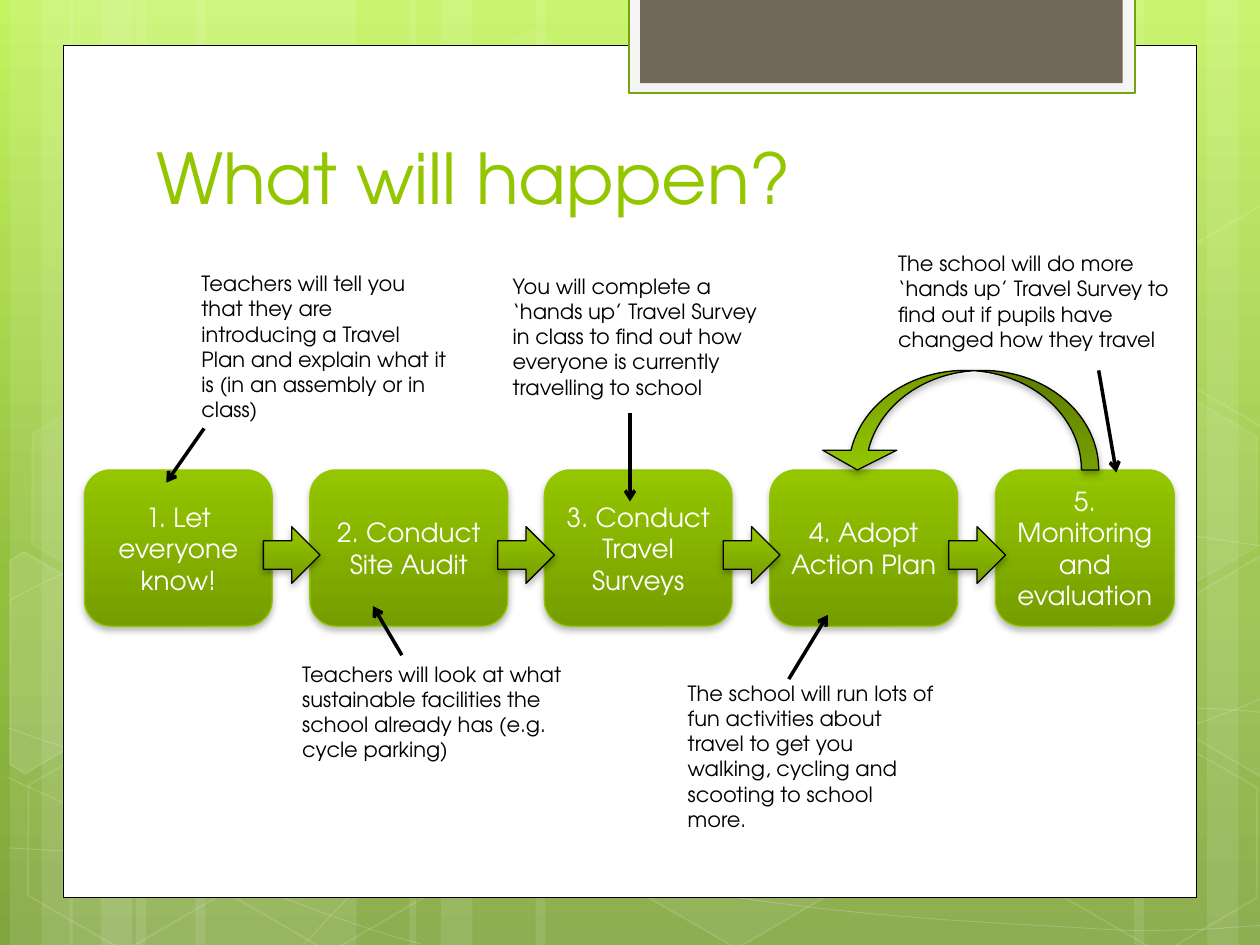
from copy import deepcopy

from lxml.etree import SubElement
from pptx import Presentation
from pptx.dml.color import RGBColor
from pptx.enum.shapes import MSO_CONNECTOR, MSO_SHAPE
from pptx.enum.text import MSO_ANCHOR, PP_ALIGN
from pptx.oxml.ns import qn
from pptx.util import Inches, Pt

FONT = "TeX Gyre Adventor"
GREEN = "94C600"
GREEN_FADE = [(0, GREEN), (1, "769D00")]


def paint(fill, colour, opacity=100):
    """Fill with nothing, one hex colour, or a downward gradient of (position, hex) stops."""
    if colour is None:
        fill.background()
    elif isinstance(colour, str):
        fill.solid()
        fill.fore_color.rgb = RGBColor.from_string(colour)
        if opacity < 100:
            for tag in fill._xPr.iter(qn("a:srgbClr")):
                SubElement(tag, qn("a:alpha"), val=str(opacity * 1000))
    else:
        fill.gradient()
        fill.gradient_angle = 270
        stop_list = fill._xPr.find(".//" + qn("a:gsLst"))
        while len(stop_list) < len(colour):
            stop_list.append(deepcopy(stop_list[-1]))
        for stop, (position, value) in zip(fill.gradient_stops, colour):
            stop.position = position
            stop.color.rgb = RGBColor.from_string(value)


def style(shape, fill=None, opacity=100, line=None, width=1, line_opacity=100, shadow=False):
    paint(shape.fill, fill, opacity)
    if line:
        shape.line.width = Pt(width)
        paint(shape.line.fill, line, line_opacity)
    else:
        shape.line.fill.background()
    shape.shadow.inherit = False
    if shadow:
        effects = shape._element.spPr.find(qn("a:effectLst"))
        outer = SubElement(effects, qn("a:outerShdw"), blurRad=str(Pt(4)), dist=str(Pt(2)),
                           dir="5400000", rotWithShape="0")
        black = SubElement(outer, qn("a:srgbClr"), val="000000")
        SubElement(black, qn("a:alpha"), val="28000")


deck = Presentation()
deck.slide_width, deck.slide_height = Inches(10), Inches(7.5)
page = deck.slides.add_slide(deck.slide_layouts[6])
shapes = page.shapes
paint(page.background.fill, [(0, "C3F35F"), (0.62, "93BF3F"), (1, "81A53E")])

# Pale vertical bands: left, width
bands = [(1.08, 1.75), (0.08, 0.5), (0.33, 0.83), (1.55, 1.75), (0.55, 0.5), (0.8, 0.83),
         (7.33, 1.75), (9.58, 0.5), (9, 0.83), (4.25, 3.08), (3.25, 0.5), (3.5, 0.83)]
for left, width in bands:
    band = shapes.add_shape(MSO_SHAPE.RECTANGLE, Inches(left), 0, Inches(width), Inches(7.5))
    style(band, "FFFFFF", 10)

# Faint curves: a start point, then cubic segments of two controls and an end
curves = [
    [(0.07, 6.73), (0.61, 6.76), (1.15, 6.79), (1.9, 6.78), (2.65, 6.77), (3.58, 6.75),
     (4.58, 6.65), (5.58, 6.55), (7, 6.36), (7.92, 6.17), (8.83, 5.98), (9.77, 5.68),
     (10.07, 5.51)],
    [(0.07, 4.77), (0.36, 4.61), (0.65, 4.46), (1.21, 4.31), (1.78, 4.16), (2.59, 3.94),
     (3.47, 3.87), (4.36, 3.8), (5.44, 3.79), (6.54, 3.87), (7.64, 3.95), (9.47, 4.26),
     (10.07, 4.34)],
    [(0.06, 6.17), (1.27, 6.72), (2.47, 7.27), (3.34, 7.49)],
    [(0.07, 5.78), (0.38, 5.89), (0.7, 6), (1.28, 6.16), (1.86, 6.31), (2.73, 6.56),
     (3.57, 6.73), (4.4, 6.9), (5.45, 7.08), (6.28, 7.18), (7.11, 7.29), (8, 7.33),
     (8.53, 7.36), (9.05, 7.4), (9.19, 7.38), (9.45, 7.38), (9.71, 7.37), (9.89, 7.35),
     (10.07, 7.34)],
    [(2.42, 7.49), (2.6, 7.29), (2.78, 7.09), (3.02, 6.91), (3.26, 6.73), (3.6, 6.53),
     (3.88, 6.39), (4.16, 6.25), (4.33, 6.19), (4.7, 6.09), (5.06, 5.99), (5.73, 5.85),
     (6.08, 5.78), (6.44, 5.71), (6.49, 5.71), (6.8, 5.69), (7.11, 5.66), (7.6, 5.63),
     (7.94, 5.62), (8.29, 5.61), (8.86, 5.62), (8.86, 5.62), (9.08, 5.62), (9.31, 5.62),
     (9.53, 5.62), (9.71, 5.63), (9.88, 5.64), (9.97, 5.65), (10.06, 5.66), (10.03, 5.65),
     (10.06, 5.66)],
]
for points in curves:
    start, *others = [(Inches(x), Inches(y)) for x, y in points]
    builder = shapes.build_freeform(*start)
    builder.add_line_segments(others, close=False)
    curve = builder.convert_to_shape()
    outline = curve._element.spPr.find(".//" + qn("a:path"))
    straight = outline.findall(qn("a:lnTo"))
    for first in range(0, len(straight), 3):
        cubic = SubElement(outline, qn("a:cubicBezTo"))
        for segment in straight[first:first + 3]:
            cubic.append(segment[0])
            outline.remove(segment)
    style(curve, line="FFFFFF", width=0.5, line_opacity=20)

# Hexagons: left, top, fill opacity, line opacity
hexagons = [(3.34, 0.36, 4, 8), (4.97, 5.89, 6, 12), (0.11, 5.91, 0, 12), (0.14, 3.12, 7, 8),
            (1.74, 5.92, 0, 12), (7.53, 4.53, 10, 12), (8.34, 5.93, 0, 12), (8.34, 3.14, 7, 8)]
for left, top, opacity, line_opacity in hexagons:
    hexagon = shapes.add_shape(MSO_SHAPE.HEXAGON, Inches(left), Inches(top),
                               Inches(1.75), Inches(1.52))
    hexagon.adjustments[0], hexagon.adjustments[1] = 0.285, 1.155
    hexagon.rotation = 30
    style(hexagon, "FFFFFF" if opacity else None, opacity, "FFFFFF", 1, line_opacity)

# Hexagons cut off by the slide edge: fill opacity, corners
cut_hexagons = [
    (10, [(0.08, 4.45), (0.19, 4.38), (0.96, 4.82), (0.95, 5.7), (0.2, 6.14), (0.08, 6.07)]),
    (4, [(9.26, 4.85), (10.01, 4.41), (10.09, 4.46), (10.09, 6.13), (10.02, 6.17), (9.26, 5.73)]),
    (0, [(9.26, 2.07), (10.01, 1.63), (10.1, 1.68), (10.09, 3.35), (10.02, 3.39), (9.26, 2.95)]),
]
for opacity, corners in cut_hexagons:
    start, *others = [(Inches(x), Inches(y)) for x, y in corners]
    builder = shapes.build_freeform(*start)
    builder.add_line_segments(others, close=True)
    style(builder.convert_to_shape(), "FFFFFF" if opacity else None, opacity, "FFFFFF", 1, 12)

# White panel and the tab at its top
panels = [((0.5, 0.36, 9, 6.76), {"fill": "FFFFFF", "line": "000000", "width": 0.5}),
          ((4.99, -0.02, 4.02, 0.76), {"fill": "F5F5F5", "line": "74A510", "width": 1.25}),
          ((5.08, -0.02, 3.83, 0.68), {"fill": "71685A"})]
for place, look in panels:
    style(shapes.add_shape(MSO_SHAPE.RECTANGLE, *[Inches(value) for value in place]), **look)

# Process boxes: left, width, label
steps = [(0.67, 1.49, "1. Let everyone know!"), (2.46, 1.57, "2. Conduct Site Audit"),
         (4.32, 1.49, "3. Conduct Travel Surveys"), (6.11, 1.49, "4. Adopt Action Plan"),
         (7.9, 1.42, "5. Monitoring and evaluation")]
labels = []
for left, width, label in steps:
    box = shapes.add_shape(MSO_SHAPE.ROUNDED_RECTANGLE, Inches(left), Inches(3.73),
                           Inches(width), Inches(1.24))
    style(box, GREEN_FADE, line=GREEN, width=0.75, shadow=True)
    for side in ("left", "right", "top", "bottom"):
        setattr(box.text_frame, "margin_" + side, Inches(0.06))
    labels.append((box, label, 15, "FFFFFF", PP_ALIGN.CENTER, MSO_ANCHOR.MIDDLE))

for left in (2.09, 3.95, 5.74, 7.53):
    arrow = shapes.add_shape(MSO_SHAPE.RIGHT_ARROW, Inches(left), Inches(4.18),
                             Inches(0.45), Inches(0.45))
    style(arrow, GREEN_FADE, line="000000", width=0.75, shadow=True)

return_arrow = shapes.add_shape(MSO_SHAPE.CURVED_UP_ARROW, Inches(6.51), Inches(2.94),
                                Inches(2.21), Inches(0.79))
for index, value in enumerate((0.174, 0.745, 0.199)):
    return_arrow.adjustments[index] = value
return_arrow.rotation = 180
style(return_arrow, GREEN_FADE, line="000000", width=0.75, shadow=True)

# Pointers from each note to its step
pointers = [(1.62, 3.4, 1.32, 3.83), (3.19, 5.2, 2.96, 4.81), (5, 3.28, 5, 3.98),
            (6.26, 5.39, 6.57, 4.88), (8.72, 2.94, 8.86, 3.75)]
for ends in pointers:
    pointer = shapes.add_connector(MSO_CONNECTOR.STRAIGHT, *[Inches(value) for value in ends])
    pointer.line.width = Pt(2)
    paint(pointer.line.fill, "000000")
    SubElement(pointer.line._get_or_add_ln(), qn("a:tailEnd"), type="arrow")
    SubElement(pointer._element.spPr, qn("a:effectLst"))

# Title and notes: place, wording, size, colour, anchor
texts = [
    ((1.14, 0.53, 7.68, 1.25), "What will happen?", 40, GREEN, MSO_ANCHOR.BOTTOM),
    ((1.5, 2.1, 2.15, 1.31), "Teachers will tell you that they are introducing a Travel Plan "
     "and explain what it is (in an assembly or in class)", 12, "000000", MSO_ANCHOR.TOP),
    ((2.3, 5.2, 2.61, 0.91), "Teachers will look at what sustainable facilities the school "
     "already has (e.g. cycle parking)", 12, "000000", MSO_ANCHOR.TOP),
    ((3.97, 2.12, 2.15, 1.31), "You will complete a ‘hands up’ Travel Survey in class to find "
     "out how everyone is currently travelling to school", 12, "000000", MSO_ANCHOR.TOP),
    ((5.36, 5.35, 2.15, 1.31), "The school will run lots of fun activities about travel to get "
     "you walking, cycling and scooting to school more.", 12, "000000", MSO_ANCHOR.TOP),
    ((7.03, 1.94, 2.42, 0.91), "The school will do more ‘hands up’ Travel Survey to find out "
     "if pupils have changed how they travel", 12, "000000", MSO_ANCHOR.TOP),
]
for place, wording, size, colour, anchor in texts:
    box = shapes.add_textbox(*[Inches(value) for value in place])
    labels.append((box, wording, size, colour, PP_ALIGN.LEFT, anchor))

for box, wording, size, colour, alignment, anchor in labels:
    box.text_frame.word_wrap = True
    box.text_frame.vertical_anchor = anchor
    para = box.text_frame.paragraphs[0]
    para.alignment = alignment
    span = para.add_run()
    span.text = wording
    for name, value in {"name": FONT, "size": Pt(size)}.items():
        setattr(span.font, name, value)
    paint(span.font.fill, colour)

deck.save("out.pptx")
